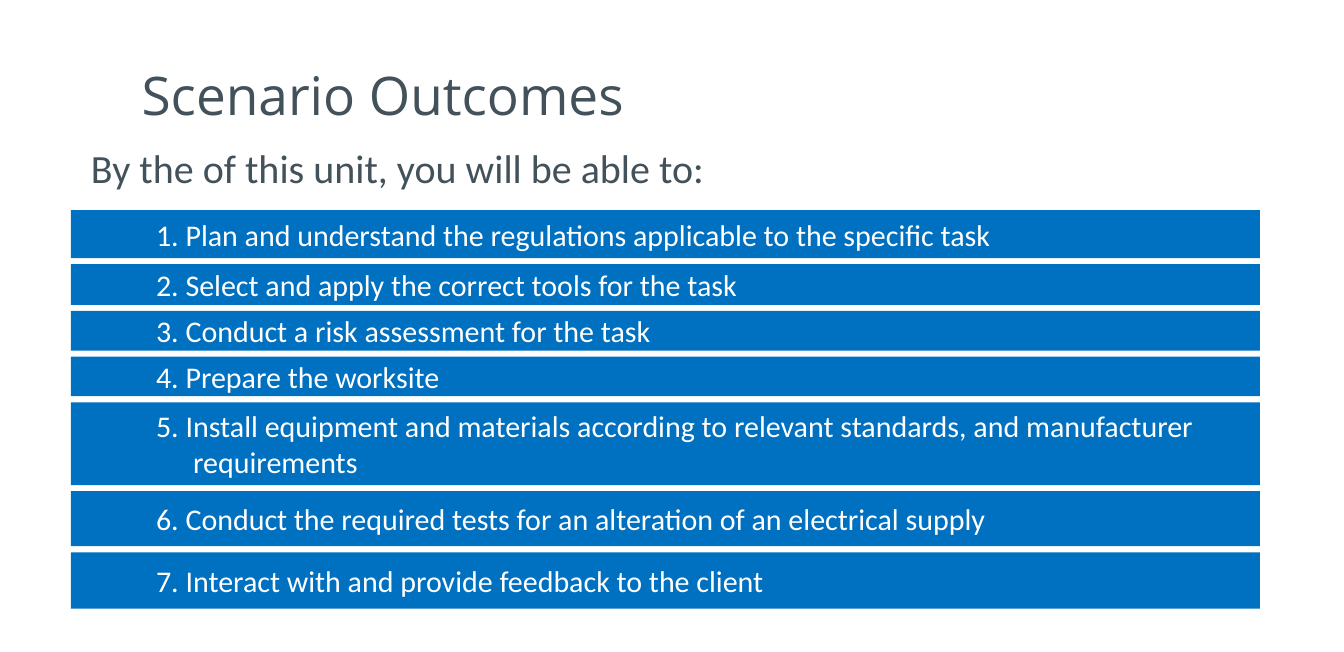
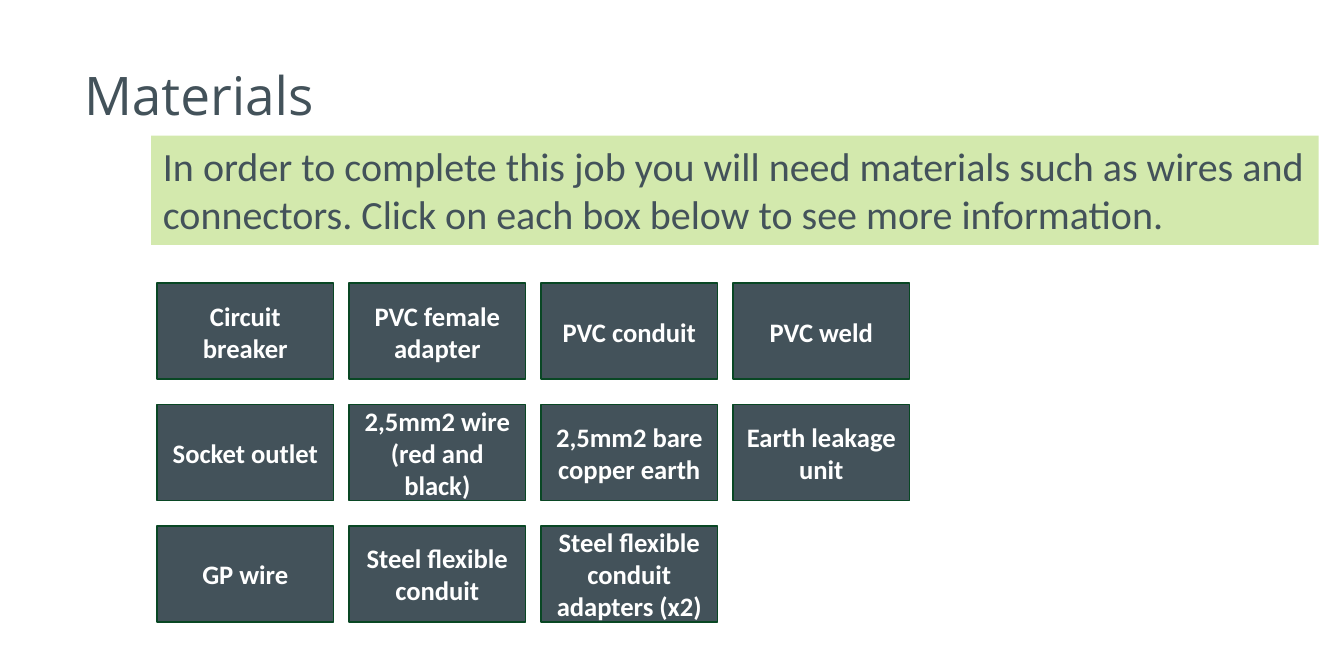
from pptx import Presentation
from pptx.dml.color import RGBColor
from pptx.enum.shapes import MSO_SHAPE
from pptx.enum.text import MSO_ANCHOR, PP_ALIGN
from pptx.util import Inches, Pt

SLATE = RGBColor(0x43, 0x52, 0x5A)
BLUE = RGBColor(0x00, 0x70, 0xC0)
LIME = RGBColor(0xD3, 0xE9, 0xAD)
DARK_GREEN = RGBColor(0x09, 0x47, 0x24)
WHITE = RGBColor(0xFF, 0xFF, 0xFF)

TITLE_FONT = {"name": "Open Sans", "size": Pt(31.9), "color": SLATE}
LEAD_FONT = {"name": "Calibri", "size": Pt(24), "color": SLATE}
BAR_FONT = {"name": "Calibri", "size": Pt(18), "color": WHITE}
BOX_FONT = {"name": "Calibri", "size": Pt(16), "color": WHITE, "bold": True}

OUTCOMES_LEAD = "By the of this unit, you will be able to:"
OUTCOMES = [  # text, bar height
    ("Plan and understand the regulations applicable to the specific task", 0.40),
    ("Select and apply the correct tools for the task", 0.34),
    ("Conduct a risk assessment for the task", 0.33),
    ("Prepare the worksite", 0.33),
    ("Install equipment and materials according to relevant standards, "
     "and manufacturer requirements", 0.69),
    ("Conduct the required tests for an alteration of an electrical supply", 0.46),
    ("Interact with and provide feedback to the client", 0.47),
]
BAR_LEFT, BAR_TOP, BAR_WIDTH, BAR_GAP = 0.59, 1.75, 9.91, 0.05
BAR_INSET, BAR_INDENT = 0.71, 0.31

MATERIALS_LEAD = ("In order to complete this job you will need materials such as wires "
                  "and connectors. Click on each box below to see more information.")
MATERIALS = [
    ["Circuit breaker", "PVC female adapter", "PVC conduit", "PVC weld"],
    ["Socket outlet", "2,5mm2 wire (red and black)", "2,5mm2 bare copper earth",
     "Earth leakage unit"],
    ["GP wire", "Steel flexible conduit", "Steel flexible conduit adapters (x2)"],
]
GRID_LEFT, GRID_TOP = 1.31, 2.36
COLUMN_STEP, ROW_STEP = 1.6, 1.01
BOX_WIDTH, BOX_HEIGHT = 1.47, 0.8


def set_text(shape, text, font, anchor=MSO_ANCHOR.MIDDLE, **paragraph_format):
    """Write one paragraph into the shape and return it."""
    frame = shape.text_frame
    frame.word_wrap = True
    frame.vertical_anchor = anchor
    paragraph = frame.paragraphs[0]
    for name, value in {"alignment": PP_ALIGN.LEFT, **paragraph_format}.items():
        setattr(paragraph, name, value)
    run = paragraph.add_run()
    run.text = text
    for name, value in font.items():
        if name == "color":
            run.font.color.rgb = value
        else:
            setattr(run.font, name, value)
    return paragraph


def add_titled_slide(presentation, title, left):
    slide = presentation.slides.add_slide(presentation.slide_layouts[5])
    shape = slide.shapes.title
    place = {"left": left, "top": 0.29, "width": 8.33, "height": 1.05}
    for name, value in place.items():
        setattr(shape, name, Inches(value))
    set_text(shape, title, TITLE_FONT, line_spacing=0.9)
    return slide


def add_rectangle(slide, left, top, width, height, fill, line=None):
    shape = slide.shapes.add_shape(
        MSO_SHAPE.RECTANGLE, *map(Inches, (left, top, width, height)))
    shape.shadow.inherit = False
    shape.fill.solid()
    shape.fill.fore_color.rgb = fill
    if line is None:
        shape.line.fill.background()
    else:
        shape.line.color.rgb = line
        shape.line.width = Pt(1)
    return shape


def build_outcomes(presentation):
    slide = add_titled_slide(presentation, "Scenario Outcomes", 1.08)
    lead = slide.shapes.add_textbox(*map(Inches, (0.66, 1.19, 8.75, 0.5)))
    set_text(lead, OUTCOMES_LEAD, LEAD_FONT, MSO_ANCHOR.TOP, line_spacing=0.9)
    top = BAR_TOP
    for number, (text, height) in enumerate(OUTCOMES, 1):
        bar = add_rectangle(slide, BAR_LEFT, top, BAR_WIDTH, height, BLUE)
        bar.text_frame.margin_left = Inches(BAR_INSET)
        paragraph = set_text(bar, f"{number}. {text}", BAR_FONT)
        properties = paragraph._p.get_or_add_pPr()
        properties.set("marL", str(Inches(BAR_INDENT)))
        properties.set("indent", str(-Inches(BAR_INDENT)))
        top += height + BAR_GAP


def build_materials(presentation):
    slide = add_titled_slide(presentation, "Materials", 0.6)
    for row, names in enumerate(MATERIALS):
        for column, name in enumerate(names):
            box = add_rectangle(
                slide, GRID_LEFT + column * COLUMN_STEP, GRID_TOP + row * ROW_STEP,
                BOX_WIDTH, BOX_HEIGHT, SLATE, DARK_GREEN)
            set_text(box, name, BOX_FONT, alignment=PP_ALIGN.CENTER)
    lead = add_rectangle(slide, 1.26, 1.13, 9.73, 0.91, LIME)
    set_text(lead, MATERIALS_LEAD, LEAD_FONT, MSO_ANCHOR.TOP)


def main():
    presentation = Presentation()
    presentation.slide_width = Inches(11.2)
    presentation.slide_height = Inches(5.43)
    build_outcomes(presentation)
    build_materials(presentation)
    presentation.save("out.pptx")


if __name__ == "__main__":
    main()
